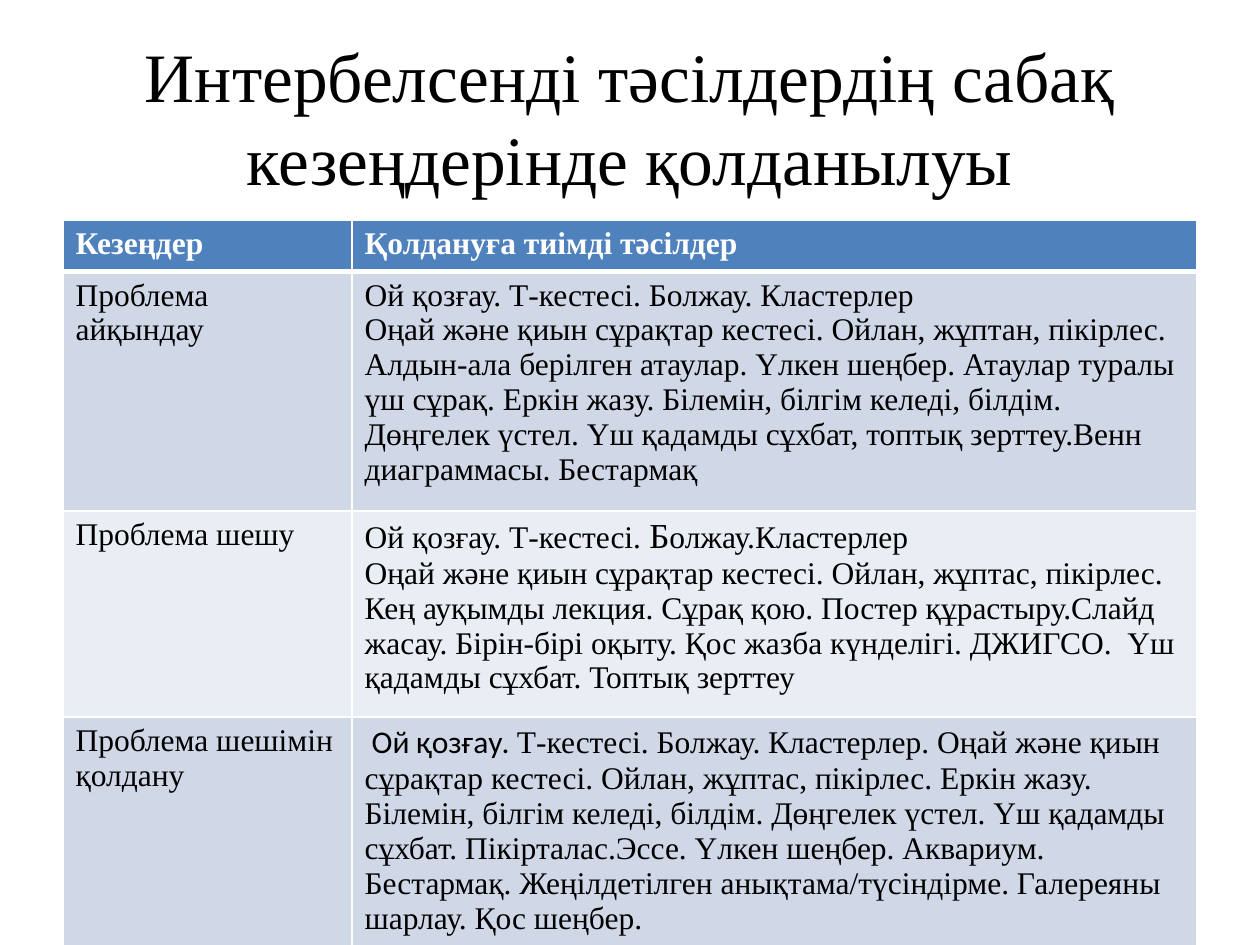
from lxml import etree
from pptx import Presentation
from pptx import util as u
from pptx.dml.color import RGBColor
from pptx.enum import text
from pptx.oxml.ns import qn

Pt = u.Pt

# Content: a cell is a list of paragraphs, a paragraph a list of (text, style)
TITLE = "Интербелсенді тәсілдердің сабақ кезеңдерінде қолданылуы"
ROWS = [
    ([[("Кезеңдер", "body")]],
     [[("Қолдануға тиімді тәсілдер", "body")]]),
    ([[("Проблема айқындау", "body")]],
     [[("Ой қозғау. Т-кестесі. Болжау. Кластерлер", "body")],
      [("Оңай және қиын сұрақтар кестесі. Ойлан, жұптан, пікірлес. "
        "Алдын-ала берілген атаулар. Үлкен шеңбер. Атаулар туралы үш сұрақ. "
        "Еркін жазу. Білемін, білгім келеді, білдім. Дөңгелек үстел. "
        "Үш қадамды сұхбат, топтық зерттеу.Венн диаграммасы. Бестармақ", "body")]]),
    ([[("Проблема шешу", "body")]],
     [[("Ой қозғау. Т-кестесі. ", "body"), ("Б", "large"),
       ("олжау.Кластерлер", "body")],
      [("Оңай және қиын сұрақтар кестесі. Ойлан, жұптас, пікірлес. "
        "Кең ауқымды лекция. Сұрақ қою. Постер құрастыру.Слайд жасау. "
        "Бірін-бірі оқыту. Қос жазба күнделігі. ДЖИГСО.  "
        "Үш қадамды сұхбат. Топтық зерттеу", "body")]]),
    ([[("Проблема шешімін қолдану", "body")]],
     [[(" Ой қозғау. ", "sans"),
       ("Т-кестесі. Болжау. Кластерлер. Оңай және қиын сұрақтар кестесі. "
        "Ойлан, жұптас, пікірлес. Еркін жазу. Білемін, білгім келеді, білдім. "
        "Дөңгелек үстел. Үш қадамды сұхбат. Пікірталас.Эссе. Үлкен шеңбер. "
        "Аквариум. Бестармақ. Жеңілдетілген анықтама/түсіндірме. "
        "Галереяны шарлау. Қос шеңбер.", "body")]]),
]

THEME = {
    "ink": "000000", "header_ink": "FFFFFF", "border": "FFFFFF",
    "header": "4F81BD", "bands": ("D0D8E8", "E9EDF4"),
    "title": ("Times New Roman", 39.6), "body": ("Times New Roman", 18),
    "large": ("Times New Roman", 20), "sans": ("Calibri", 18),
}
MARGIN, WIDTH = 36, 648
TABLE_TOP, TABLE_HEIGHT = 126, 420.5
COLUMN_WIDTHS = (165.2, 482.8)
ROW_HEIGHT = 29.2  # minimum; rows grow with their text


def style_font(font, style, color, bold=False):
    name, size = THEME[style]
    font.name, font.size, font.bold = name, Pt(size), bold
    font.color.rgb = RGBColor.from_string(color)


def add_borders(cell, bottom):
    properties = cell._tc.get_or_add_tcPr()
    for side, width in zip("LRTB", (1, 1, 1, bottom)):
        line = etree.SubElement(properties, qn(f"a:ln{side}"), w=str(Pt(width)))
        fill = etree.SubElement(line, qn("a:solidFill"))
        etree.SubElement(fill, qn("a:srgbClr"), val=THEME["border"])


def fill_cell(cell, paragraphs, row):
    header = row == 0
    add_borders(cell, 3 if header else 1)
    cell.fill.solid()
    color = THEME["header"] if header else THEME["bands"][(row - 1) % 2]
    cell.fill.fore_color.rgb = RGBColor.from_string(color)
    ink = THEME["header_ink" if header else "ink"]
    for index, runs in enumerate(paragraphs):
        frame = cell.text_frame
        para = frame.add_paragraph() if index else frame.paragraphs[0]
        style_font(para.font, "body", ink, header)
        for words, style in runs:
            span = para.add_run()
            span.text = words
            style_font(span.font, style, ink, header)


deck = Presentation()
deck.slide_width, deck.slide_height = Pt(720), Pt(540)
page = deck.slides.add_slide(deck.slide_layouts[6])

# Title
box = page.shapes.add_textbox(Pt(MARGIN), Pt(21.6), Pt(WIDTH), Pt(90))
frame = box.text_frame
frame.word_wrap = True
frame.vertical_anchor = text.MSO_ANCHOR.MIDDLE
para = frame.paragraphs[0]
para.text = TITLE
para.alignment = text.PP_ALIGN.CENTER
style_font(para.font, "title", THEME["ink"])

# Table of lesson stages and methods
holder = page.shapes.add_table(
    len(ROWS), len(COLUMN_WIDTHS), Pt(MARGIN), Pt(TABLE_TOP),
    Pt(WIDTH), Pt(TABLE_HEIGHT))
table = holder.table
for column, width in zip(table.columns, COLUMN_WIDTHS):
    column.width = Pt(width)
for row, cells in enumerate(ROWS):
    table.rows[row].height = Pt(ROW_HEIGHT)
    for column, paragraphs in enumerate(cells):
        fill_cell(table.cell(row, column), paragraphs, row)
holder.height = Pt(TABLE_HEIGHT)

deck.save("out.pptx")
